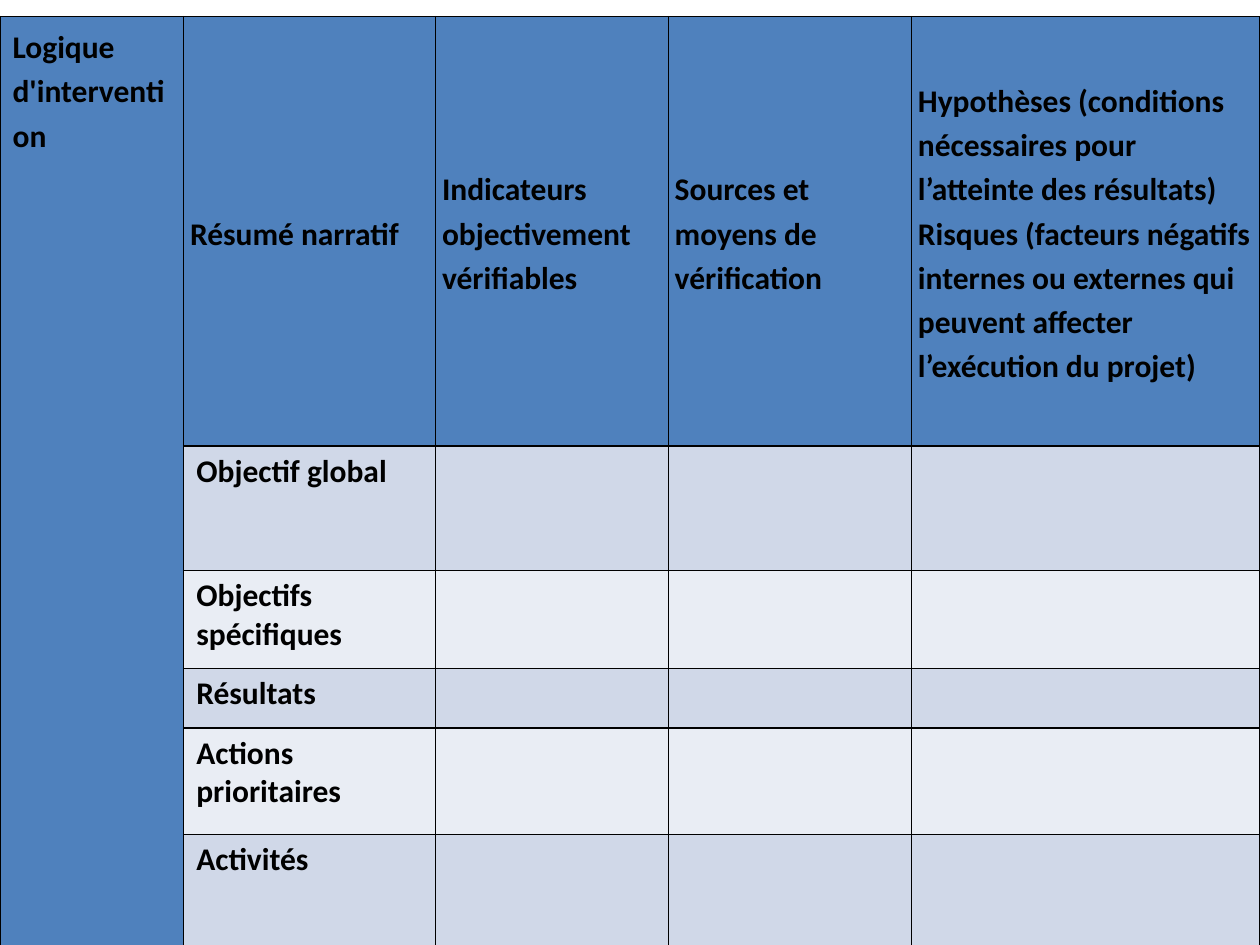
from dataclasses import dataclass

from lxml.etree import SubElement
from pptx import Presentation
from pptx.dml.color import RGBColor
from pptx.enum.text import MSO_ANCHOR
from pptx.oxml.ns import qn
from pptx.util import Pt


@dataclass(frozen=True)
class Theme:
    font: str = "Calibri"
    size: float = 18
    ink: str = "000000"
    header: str = "4F81BD"
    bands: tuple = ("D0D8E8", "E9EDF4")
    border: float = 1
    header_spacing: float = 1.15


THEME = Theme()
COLUMN_WIDTHS = (105, 144, 133, 139, 199)
ROW_HEIGHTS = (245.5, 71, 56, 34, 61, 62.5)
SIDE_TITLE = "Logique d'intervention"
HEADINGS = (
    ("Résumé narratif",),
    ("Indicateurs objectivement vérifiables",),
    ("Sources et moyens de vérification",),
    (
        "Hypothèses (conditions nécessaires pour l’atteinte des résultats)",
        "Risques (facteurs négatifs internes ou externes qui peuvent affecter "
        "l’exécution du projet)",
    ),
)
LEVELS = (
    "Objectif global",
    "Objectifs spécifiques",
    "Résultats",
    "Actions prioritaires",
    "Activités",
)


def style_cell(cell, fill):
    """Give the cell four solid borders and a plain fill."""
    properties = cell._tc.get_or_add_tcPr()
    for side in ("lnL", "lnR", "lnT", "lnB"):
        line = SubElement(properties, qn(f"a:{side}"), w=str(Pt(THEME.border)))
        solid = SubElement(line, qn("a:solidFill"))
        SubElement(solid, qn("a:srgbClr"), val=THEME.ink)
    cell.fill.solid()
    cell.fill.fore_color.rgb = RGBColor.from_string(fill)


def write_cell(cell, lines, spacing=None):
    cell.text = "\n".join(lines)
    for para in cell.text_frame.paragraphs:
        para.line_spacing = spacing
        para.font.name = THEME.font
        para.font.size = Pt(THEME.size)
        para.font.bold = True
        para.font.color.rgb = RGBColor.from_string(THEME.ink)


def write_heading(cell, lines):
    write_cell(cell, lines, THEME.header_spacing)
    cell.vertical_anchor = MSO_ANCHOR.MIDDLE
    cell.margin_left = cell.margin_right = Pt(3.6)
    cell.margin_top = cell.margin_bottom = Pt(0)


def add_logical_framework(page, left, top, width, height):
    """Place the table, sharing the box out in proportion to its columns and rows."""
    table = page.shapes.add_table(
        len(ROW_HEIGHTS), len(COLUMN_WIDTHS), Pt(left), Pt(top), Pt(width), Pt(height)
    ).table
    for column, share in zip(table.columns, COLUMN_WIDTHS):
        column.width = Pt(width * share / sum(COLUMN_WIDTHS))
    for row, share in zip(table.rows, ROW_HEIGHTS):
        row.height = Pt(height * share / sum(ROW_HEIGHTS))

    for row_index, row in enumerate(table.rows):
        for column_index, cell in enumerate(row.cells):
            is_header = row_index == 0 or column_index == 0
            band = THEME.bands[(row_index - 1) % 2]
            style_cell(cell, THEME.header if is_header else band)

    table.cell(0, 0).merge(table.cell(len(LEVELS), 0))
    write_cell(table.cell(0, 0), (SIDE_TITLE,), THEME.header_spacing)
    for column_index, lines in enumerate(HEADINGS, start=1):
        write_heading(table.cell(0, column_index), lines)
    for row_index, level in enumerate(LEVELS, start=1):
        write_cell(table.cell(row_index, 1), (level,))


def main():
    deck = Presentation()
    deck.slide_width, deck.slide_height = Pt(720), Pt(540)
    page = deck.slides.add_slide(deck.slide_layouts[6])
    add_logical_framework(page, 0, 9.5, 720, 530)
    deck.save("out.pptx")


if __name__ == "__main__":
    main()
